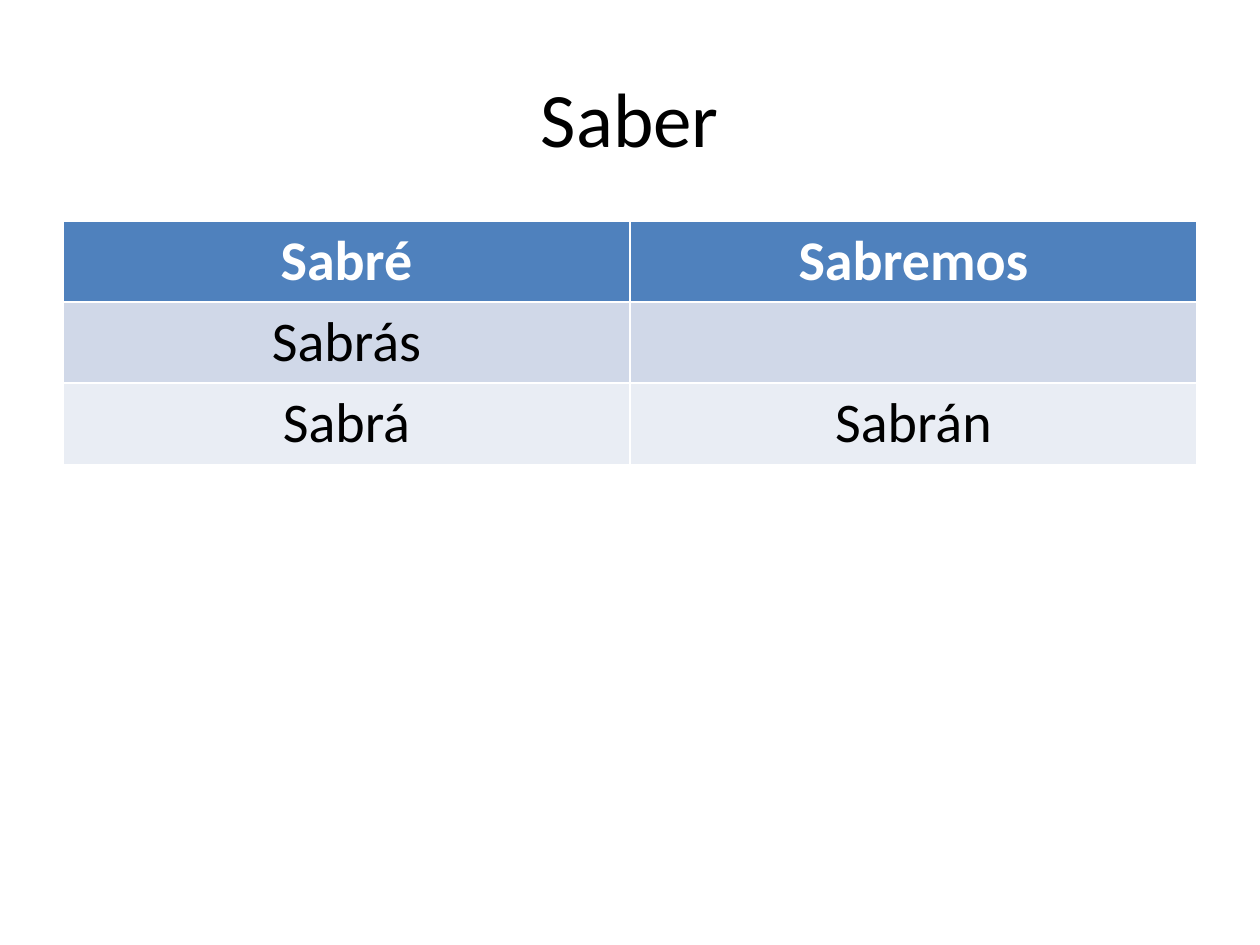
from pptx import Presentation
from pptx.dml.color import RGBColor
from pptx.enum.text import MSO_ANCHOR, PP_ALIGN
from pptx.util import Pt

TITLE = "Saber"
ROWS = [
    ("Sabré", "Sabremos"),
    ("Sabrás", ""),
    ("Sabrá", "Sabrán"),
]
FILLS = ["4F81BD", "D0D8E8", "E9EDF4"]
FONT = "Calibri"
WIDE, HIGH = 1260, 945
LEFT, SPAN = 63, 1134
HEAD = (LEFT, 38, SPAN, 157)
TOP, STEP = 221, 81


def px(n):
    return n * 914400 // 126


def tint(code):
    return RGBColor.from_string(code)


def write(frame, text, size, color, bold=False):
    line = frame.paragraphs[0]
    line.alignment = PP_ALIGN.CENTER
    if not text:
        line.font.size = Pt(size)
        return
    run = line.add_run()
    run.text = text
    font = run.font
    font.name, font.size, font.bold = FONT, Pt(size), bold
    font.color.rgb = tint(color)


def main():
    deck = Presentation()
    deck.slide_width, deck.slide_height = px(WIDE), px(HIGH)
    slide = deck.slides.add_slide(deck.slide_layouts[5])

    title = slide.shapes.title
    title.left, title.top, title.width, title.height = map(px, HEAD)
    title.text_frame.vertical_anchor = MSO_ANCHOR.MIDDLE
    write(title.text_frame, TITLE, 44, "000000")

    count = len(ROWS)
    box = map(px, (LEFT, TOP, SPAN, STEP * count))
    table = slide.shapes.add_table(count, len(ROWS[0]), *box).table
    for r, (words, fill) in enumerate(zip(ROWS, FILLS)):
        first = r == 0
        for c, word in enumerate(words):
            cell = table.cell(r, c)
            cell.fill.solid()
            cell.fill.fore_color.rgb = tint(fill)
            write(cell.text_frame, word, 32, "FFFFFF" if first else "000000", first)

    deck.save("out.pptx")


if __name__ == "__main__":
    main()
